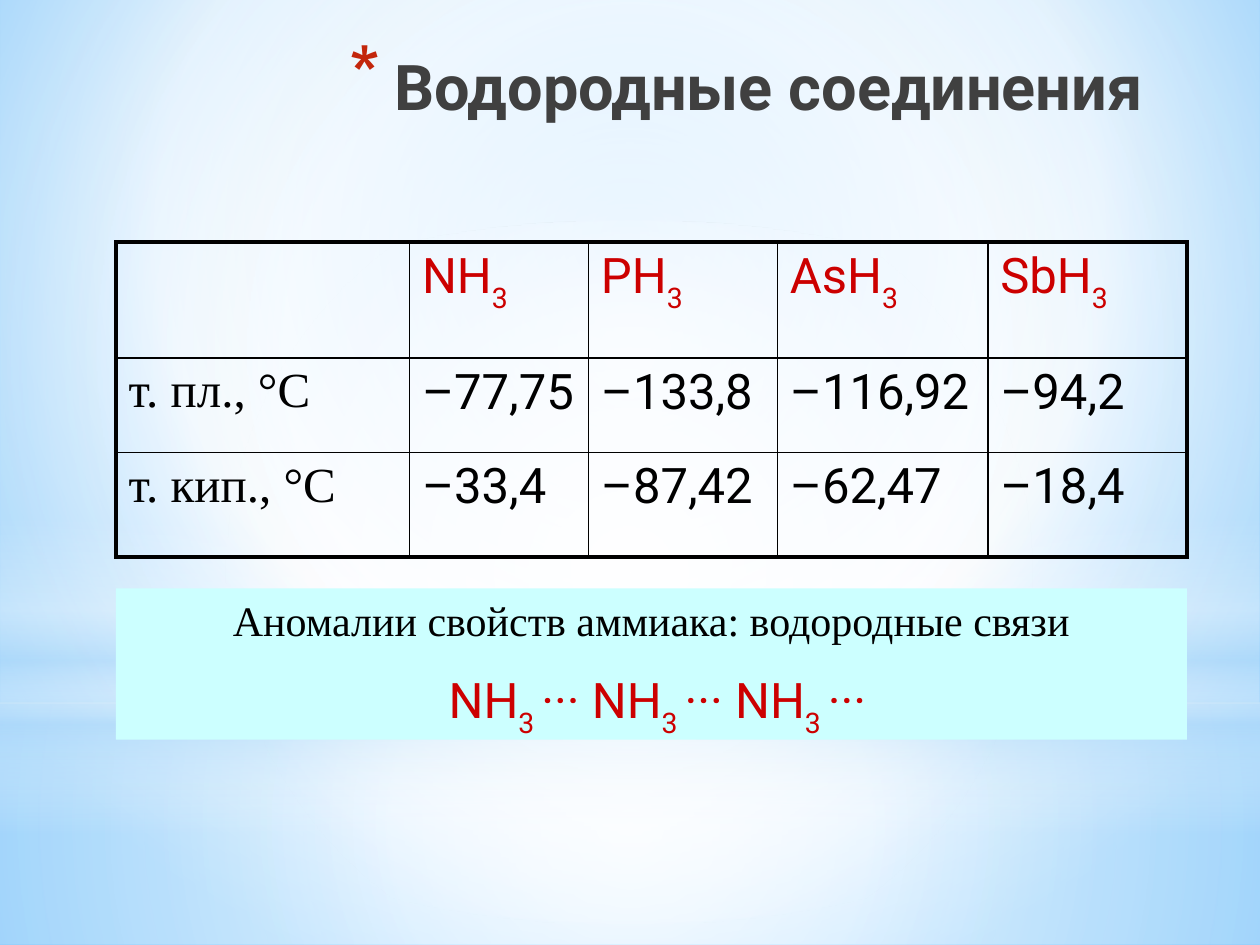
from lxml import etree
from pptx import Presentation
from pptx import util as u
from pptx.dml.color import RGBColor
from pptx.enum import shapes, text
from pptx.oxml import ns

BLACK = RGBColor(0x00, 0x00, 0x00)
DARK_GREY = RGBColor(0x40, 0x40, 0x40)
RED = RGBColor(0xCC, 0x00, 0x00)
BULLET_RED = RGBColor(0xC3, 0x26, 0x0C)
WHITE = RGBColor(0xFF, 0xFF, 0xFF)
SKY = RGBColor(0xB4, 0xDC, 0xFA)
PALE_BLUE = RGBColor(0x9E, 0xD5, 0xFF)
DEEP_BLUE = RGBColor(0x5B, 0xB9, 0xFF)
PALE_CYAN = RGBColor(0xCC, 0xFF, 0xFF)

TITLE = dict(name="Roboto", size=u.Pt(36), bold=True, color=DARK_GREY)
FORMULA = dict(name="Roboto", size=u.Pt(28), color=RED)
NUMBER = {**FORMULA, "color": BLACK}
LABEL = {**NUMBER, "name": "Times New Roman"}
NOTE = {**LABEL, "size": u.Pt(24)}
CENTRE = (50, 50, 50, 50)


def child(parent, tag, **attributes):
    element = etree.SubElement(parent, ns.qn(tag))
    for key, value in attributes.items():
        element.set(key, str(value))
    return element


def use_gradient(parent, stops, focus=None, angle=90):
    """Swap the solid fill in parent for a gradient of (position, colour, opacity)."""
    gradient = etree.Element(ns.qn("a:gradFill"), rotWithShape="1")
    stop_list = child(gradient, "a:gsLst")
    for position, color, opacity in stops:
        stop = child(stop_list, "a:gs", pos=position * 1000)
        child(child(stop, "a:srgbClr", val=color), "a:alpha", val=opacity * 1000)
    if focus:
        circle = child(gradient, "a:path", path="circle")
        child(circle, "a:fillToRect", **{side: inset * 1000 for side, inset in zip("ltrb", focus)})
    else:
        child(gradient, "a:lin", ang=angle * 60000, scaled=0)
    parent.replace(parent.find(ns.qn("a:solidFill")), gradient)


class SlideBuilder:
    def __init__(self, slide):
        self.slide = slide

    def background(self, stops, focus):
        self.slide.background.fill.solid()
        use_gradient(self.slide.element.find(".//" + ns.qn("p:bgPr")), stops, focus)

    def shape(self, box, color, kind=shapes.MSO_SHAPE.RECTANGLE):
        shape = self.slide.shapes.add_shape(kind, *map(u.Inches, box))
        shape.shadow.inherit = False
        shape.fill.solid()
        shape.fill.fore_color.rgb = color
        shape.line.fill.background()
        return shape

    def glow(self, box, stops, focus=None, kind=shapes.MSO_SHAPE.RECTANGLE):
        use_gradient(self.shape(box, WHITE, kind).element.spPr, stops, focus)

    def fill_paragraph(self, paragraph, content, style, before=0, align=text.PP_ALIGN.LEFT):
        """Set content, in which every second part between bars is a subscript."""
        paragraph.alignment = align
        if before:
            spacing = child(paragraph._p.get_or_add_pPr(), "a:spcBef")
            child(spacing, "a:spcPct", val=before * 1000)
        for index, part in enumerate(content.split("|")):
            run = paragraph.add_run()
            run.text = part
            for key, value in style.items():
                if key == "color":
                    run.font.color.rgb = value
                else:
                    setattr(run.font, key, value)
            if index % 2:
                run.font._element.set("baseline", "-30000")

    def title(self, box, content):
        frame = self.slide.shapes.add_textbox(*map(u.Inches, box)).text_frame
        frame.word_wrap = True
        paragraph = frame.paragraphs[0]
        self.fill_paragraph(paragraph, content, TITLE, align=text.PP_ALIGN.RIGHT)
        props = paragraph._p.get_or_add_pPr()
        props.set("marL", str(u.Inches(0.35)))
        props.set("indent", str(-u.Inches(0.35)))
        child(child(props, "a:buClr"), "a:srgbClr", val=BULLET_RED)
        child(props, "a:buSzPct", val=128000)
        child(props, "a:buChar", char="*")

    def borders(self, cell, widths):
        props = cell._tc.get_or_add_tcPr()
        for index, (side, width) in enumerate(zip("LRTB", widths)):
            line = child(props, "a:ln" + side, w=u.Pt(width))
            child(child(line, "a:solidFill"), "a:srgbClr", val=BLACK)
            props.insert(index, line)

    def table(self, box, rows, widths, heights):
        table = self.slide.shapes.add_table(len(rows), len(widths), *map(u.Inches, box)).table
        table.first_row = table.horz_banding = False
        for column, width in zip(table.columns, widths):
            column.width = u.Inches(width)
        for row, height in zip(table.rows, heights):
            row.height = u.Inches(height)
        last_row, last_column = len(rows) - 1, len(widths) - 1
        for r, values in enumerate(rows):
            for c, value in enumerate(values):
                cell = table.cell(r, c)
                cell.fill.background()
                outer = (c == 0, c == last_column, r == 0, r == last_row)
                self.borders(cell, [2.25 if edge else 1 for edge in outer])
                if value:
                    style = FORMULA if r == 0 else LABEL if c == 0 else NUMBER
                    self.fill_paragraph(cell.text_frame.paragraphs[0], value, style, before=20)

    def panel(self, box, lines):
        frame = self.shape(box, PALE_CYAN).text_frame
        frame.word_wrap = True
        frame.vertical_anchor = text.MSO_ANCHOR.TOP
        for index, (content, style) in enumerate(lines):
            paragraph = frame.add_paragraph() if index else frame.paragraphs[0]
            self.fill_paragraph(paragraph, content, style, before=50, align=text.PP_ALIGN.CENTER)


def main():
    deck = Presentation()
    deck.slide_width, deck.slide_height = u.Inches(10), u.Inches(7.5)
    page = SlideBuilder(deck.slides.add_slide(deck.slide_layouts[6]))

    page.background([(0, PALE_BLUE, 100), (60, WHITE, 100), (100, DEEP_BLUE, 100)], (20, 10, 20, 60))
    page.glow((0, 5.58, 10, 1.92), [(0, WHITE, 91), (37, WHITE, 76), (100, SKY, 79)], CENTRE)
    page.glow((0, 0, 10, 5.58), [(0, WHITE, 89), (48, WHITE, 62), (100, SKY, 79)], CENTRE)
    page.glow((0, 4.12, 10, 2.5), [(0, WHITE, 0), (29, WHITE, 30), (45, SKY, 40),
                                   (55, WHITE, 26), (65, SKY, 60), (100, WHITE, 0)])
    page.glow((0, 1.75, 10, 5.58), [(0, WHITE, 100), (56, WHITE, 0)], CENTRE, shapes.MSO_SHAPE.OVAL)

    page.title((0.67, 0.33, 8.5, 0.83), "Водородные соединения")
    page.table(
        (0.92, 1.92, 8.5, 2.5),
        [
            ["", "NH|3", "PH|3", "AsH|3", "SbH|3"],
            ["т. пл., °С", "–77,75", "–133,8", "–116,92", "–94,2"],
            ["т. кип., °С", "–33,4", "–87,42", "–62,47", "–18,4"],
        ],
        widths=[2.33, 1.42, 1.5, 1.67, 1.58],
        heights=[0.92, 0.75, 0.83],
    )
    page.panel((0.92, 4.67, 8.5, 1.2), [
        ("Аномалии свойств аммиака: водородные связи", NOTE),
        (" NH|3 |··· NH|3 |··· NH|3 |···", FORMULA),
    ])
    deck.save("out.pptx")


if __name__ == "__main__":
    main()
